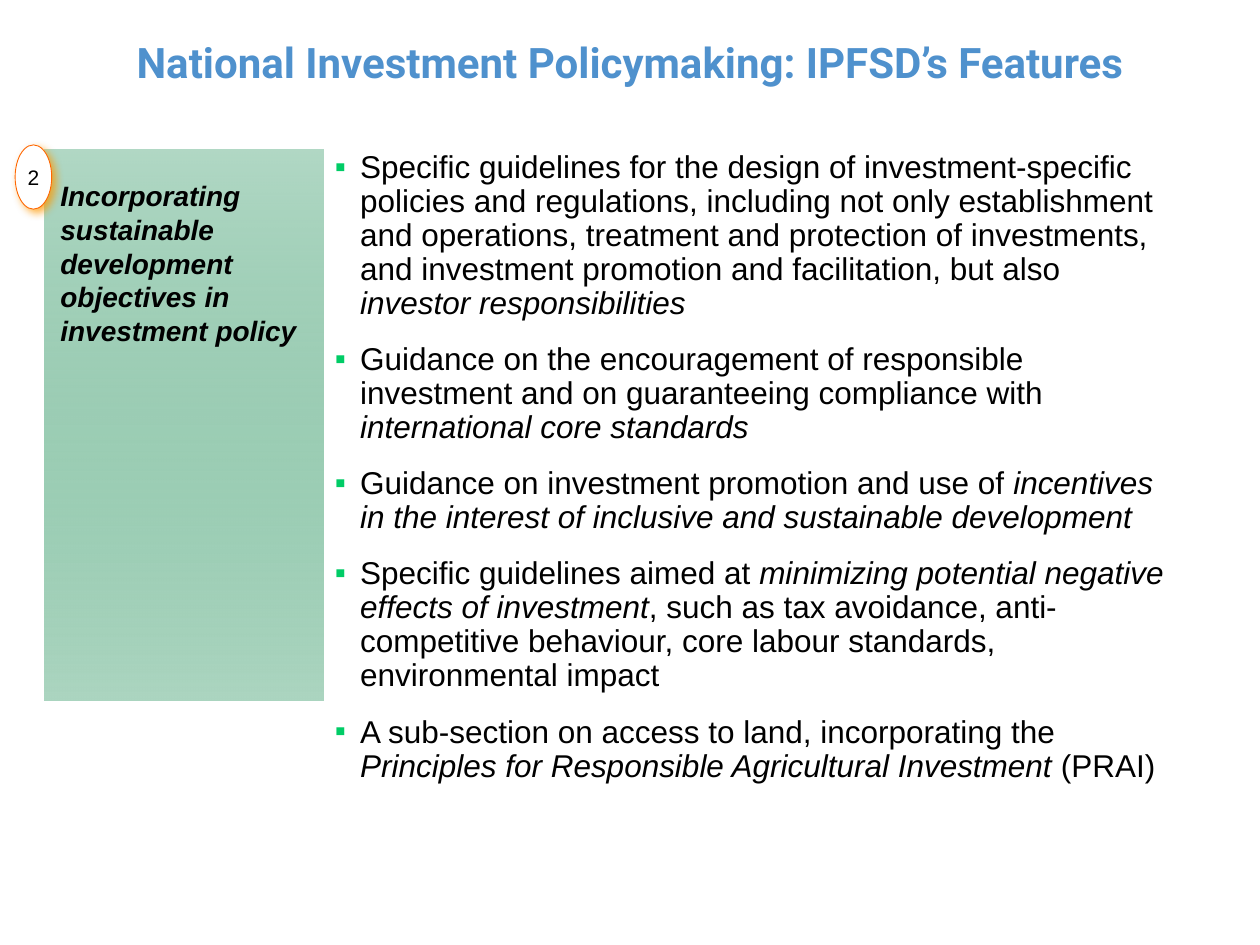
from typing import NamedTuple

from lxml.etree import SubElement
from pptx import Presentation
from pptx.dml.color import RGBColor
from pptx.enum.shapes import MSO_SHAPE as Form
from pptx.enum.text import MSO_ANCHOR as Anchor, PP_ALIGN as Align
from pptx.oxml.ns import qn
from pptx.util import Inches, Pt

BLACK = RGBColor(0x00, 0x00, 0x00)
WHITE = RGBColor(0xFF, 0xFF, 0xFF)
BLUE = RGBColor(0x4F, 0x91, 0xCD)
GREEN = RGBColor(0x33, 0x99, 0x66)
MINT = RGBColor(0xAB, 0xD5, 0xC0)
LIME = RGBColor(0x00, 0xCC, 0x66)
ORANGE = RGBColor(0xFF, 0x66, 0x00)
AMBER = RGBColor(0xFF, 0x99, 0x00)


class Box(NamedTuple):
    left: float
    top: float
    width: float
    height: float

    def place(self) -> list:
        return [Inches(side) for side in self]


class Span(NamedTuple):
    text: str
    slant: bool = False


POINTS = [
    [Span("Specific guidelines for the design of investment-specific policies and "
          "regulations, including not only establishment and operations, treatment and "
          "protection of investments, and investment promotion and facilitation, but also "),
     Span("investor responsibilities", True)],
    [Span("Guidance on the encouragement of responsible investment and on guaranteeing "
          "compliance with "),
     Span("international core standards", True)],
    [Span("Guidance on investment promotion and use of "),
     Span("incentives in the interest of inclusive and sustainable development", True)],
    [Span("Specific guidelines aimed at "),
     Span("minimizing potential negative effects of investment", True),
     Span(", such as tax avoidance, anti-competitive behaviour, core labour standards, "
          "environmental impact")],
    [Span("A sub-section on access to land, incorporating the "),
     Span("Principles for Responsible Agricultural Investment", True),
     Span(" (PRAI)")],
]


def add_run(para, span: Span, size: float, color=BLACK, face="Arial", bold=False) -> None:
    run = para.add_run()
    run.text = span.text
    font = run.font
    font.name, font.size, font.bold, font.italic = face, Pt(size), bold, span.slant
    font.color.rgb = color


def set_inset(frame, inset: float) -> None:
    frame.margin_left = frame.margin_right = Inches(inset)
    frame.margin_top = frame.margin_bottom = Inches(inset)


def add_text(slide, box: Box):
    frame = slide.shapes.add_textbox(*box.place()).text_frame
    frame.word_wrap = True
    return frame


def add_tint(parent, color: RGBColor, alpha: int) -> None:
    """Add a colour with an opacity in percent."""
    tint = SubElement(parent, qn("a:srgbClr"), val=str(color))
    SubElement(tint, qn("a:alpha"), val=str(alpha * 1000))


def add_bullet(para) -> None:
    props = para._p.get_or_add_pPr()
    props.set("marL", str(Inches(0.2)))
    props.set("indent", str(-Inches(0.2)))
    SubElement(SubElement(props, qn("a:buClr")), qn("a:srgbClr"), val=str(LIME))
    SubElement(props, qn("a:buFont"), typeface="Arial")
    SubElement(props, qn("a:buChar"), char="▪")


def add_title(slide) -> None:
    title = slide.shapes.title
    title.left, title.top, title.width, title.height = Box(0.5, 0.3, 9, 0.38).place()
    frame = title.text_frame
    frame.vertical_anchor = Anchor.MIDDLE
    para = frame.paragraphs[0]
    para.alignment = Align.CENTER
    words = Span("National Investment Policymaking: IPFSD’s Features")
    add_run(para, words, 24, BLUE, "Roboto", True)


def add_panel(slide) -> None:
    panel = slide.shapes.add_shape(Form.RECTANGLE, *Box(0.35, 1.19, 2.22, 4.37).place())
    panel.shadow.inherit = False
    panel.line.fill.background()
    fill = panel.fill
    fill.gradient()
    fill.gradient_angle = 270
    first, last = fill.gradient_stops
    last.color.rgb = MINT
    stop = first._gs
    stop.remove(stop[0])
    add_tint(stop, GREEN, 38)


def add_points(slide) -> None:
    frame = add_text(slide, Box(2.56, 1.15, 6.9, 5.28))
    for rank, spans in enumerate(POINTS):
        para = frame.add_paragraph() if rank else frame.paragraphs[0]
        add_bullet(para)
        para.line_spacing = 0.9
        para.space_before = Pt(3.6 if rank else 0)
        para.space_after = Pt(9)
        for span in spans:
            add_run(para, span, 18)


def add_label(slide) -> None:
    frame = add_text(slide, Box(0.48, 1.42, 2.11, 1.34))
    set_inset(frame, 0)
    words = Span("Incorporating sustainable development objectives in investment policy", True)
    add_run(frame.paragraphs[0], words, 16, bold=True)


def add_badge(slide) -> None:
    badge = slide.shapes.add_shape(Form.OVAL, *Box(0.12, 1.15, 0.29, 0.51).place())
    badge.fill.solid()
    badge.fill.fore_color.rgb = WHITE
    badge.line.color.rgb = ORANGE
    badge.line.width = Pt(0.5)
    badge.shadow.inherit = False
    glow = SubElement(badge._element.spPr.find(qn("a:effectLst")), qn("a:outerShdw"),
                      blurRad=str(Pt(5)), dist=str(Pt(3)), dir=str(45 * 60000),
                      algn="tl", rotWithShape="0")
    add_tint(glow, AMBER, 75)
    frame = badge.text_frame
    frame.vertical_anchor = Anchor.MIDDLE
    set_inset(frame, 0.04)
    para = frame.paragraphs[0]
    para.alignment = Align.CENTER
    add_run(para, Span("2"), 12)


def main() -> None:
    deck = Presentation()
    deck.slide_width, deck.slide_height = Inches(10), Inches(7.5)
    slide = deck.slides.add_slide(deck.slide_layouts[5])
    add_title(slide)
    add_panel(slide)
    add_points(slide)
    add_label(slide)
    add_badge(slide)
    deck.save("out.pptx")


if __name__ == "__main__":
    main()
